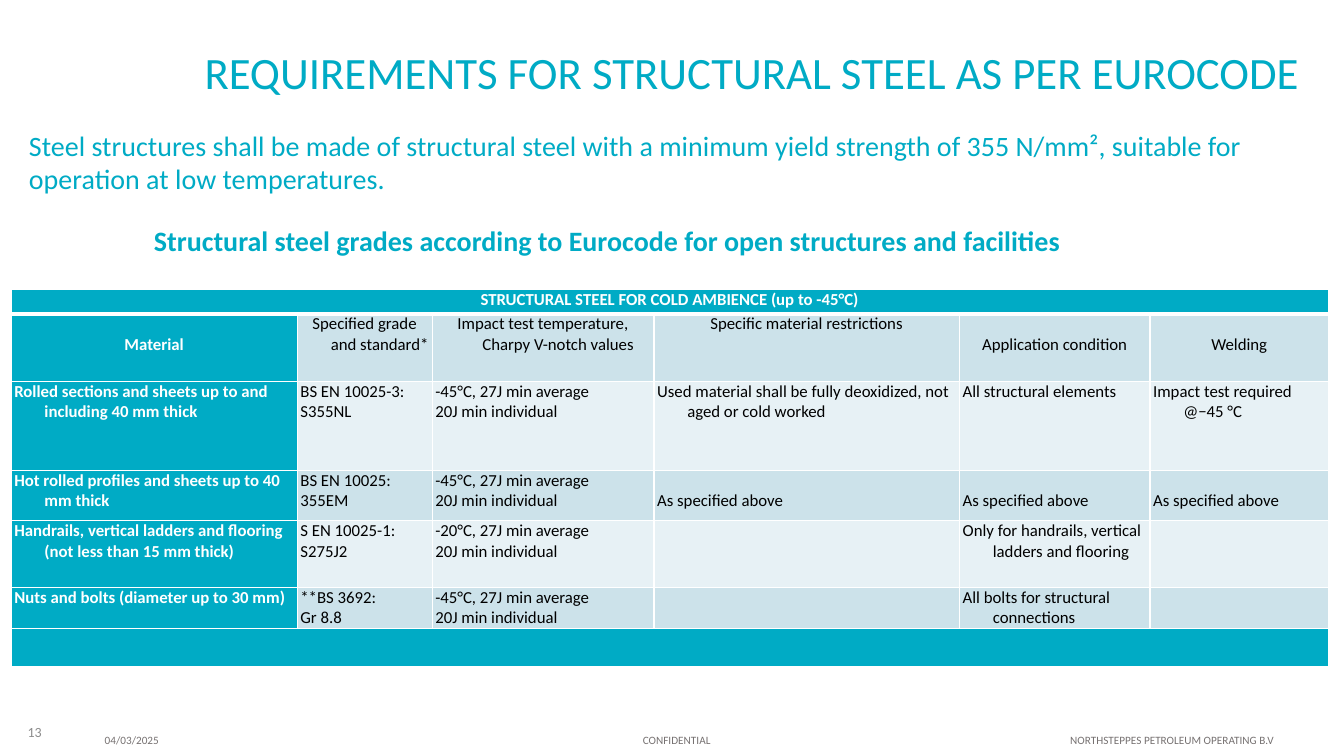
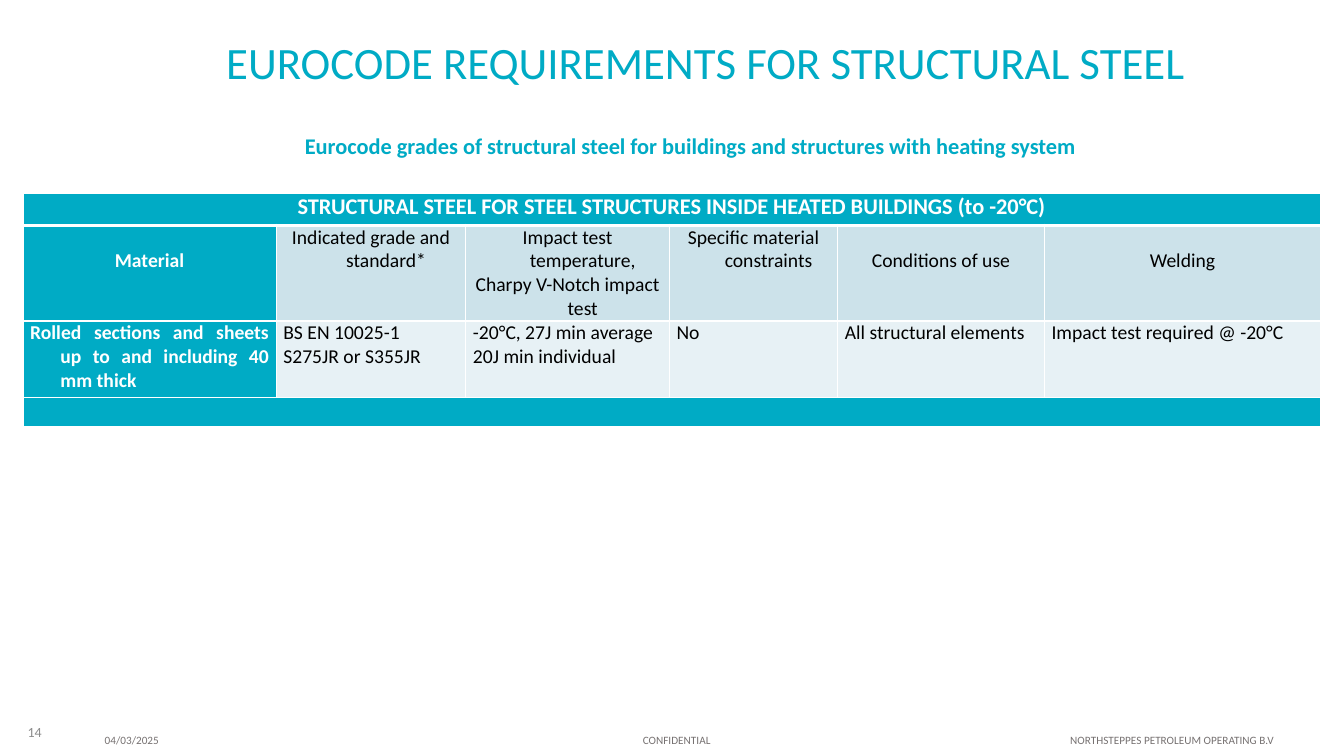
from dataclasses import dataclass

from lxml.etree import SubElement
from pptx import Presentation
from pptx.dml.color import RGBColor
from pptx.enum.text import MSO_ANCHOR as Anchor, PP_ALIGN as Align
from pptx.oxml.ns import qn
from pptx.util import Cm, Pt


# Theme
@dataclass(frozen=True)
class Theme:
    font: str = "Calibri"
    teal: str = "00ABC5"
    pale: str = "CCE2EA"
    paler: str = "E7F1F5"
    white: str = "FFFFFF"
    black: str = "000000"
    grey: str = "8C8C8C"
    footer_grey: str = "767171"
    title: int = 32
    lead: int = 20
    heading: int = 16
    number: int = 10
    footer: int = 8
    hanging: float = 0.76
    line_height: float = 1.22


THEME = Theme()

# Content: lengths in centimetres; "lowered" cells start one line down
FOOTER = ["04/03/2025", "CONFIDENTIAL", "NORTHSTEPPES PETROLEUM OPERATING B.V"]
FOOTER_TABS = [13.56, 24.33]
COLD_IMPACT = "-45°C, 27J min average\n20J min individual"
SAME = "As specified above"

SLIDES = [
    {
        "number": "13",
        "title": "REQUIREMENTS FOR STRUCTURAL STEEL AS PER EUROCODE",
        "title_at": (4.34, 1.14, 29.24, 1.63),
        "texts": [
            {"text": "Steel structures shall be made of structural steel with a minimum "
                     "yield strength of 355 N/mm², suitable for operation at low temperatures.",
             "at": (0.48, 3.1, 33.1, 2), "size": THEME.lead},
            {"text": "Structural steel grades according to Eurocode for open structures "
                     "and facilities",
             "at": (3.63, 5.5, 26, 1.1), "size": THEME.lead, "bold": True},
        ],
        "table": {
            "at": (0.28, 7.3),
            "columns": [7.21, 3.4, 5.59, 7.7, 4.8, 4.5],
            "heights": [0.61, 1.7, 2.24, 1.27, 1.68, 1.03, 0.97],
            "inset": 0.08, "caption_size": 12, "size": 12, "align": Align.LEFT,
            "lowered": {(1, 0), (1, 4), (1, 5), (3, 3), (3, 4), (3, 5)},
            "caption": "STRUCTURAL STEEL FOR COLD AMBIENCE (up to -45°C)",
            "rows": [
                ["Material", "Specified grade and standard*",
                 "Impact test temperature, Charpy V-notch values",
                 "Specific material restrictions", "Application condition", "Welding"],
                ["Rolled sections and sheets up to and including 40 mm thick",
                 "BS EN 10025-3:\nS355NL", COLD_IMPACT,
                 "Used material shall be fully deoxidized, not aged or cold worked",
                 "All structural elements", "Impact test required @−45 °C"],
                ["Hot rolled profiles and sheets up to 40 mm thick",
                 "BS EN 10025:\n355EM", COLD_IMPACT, SAME, SAME, SAME],
                ["Handrails, vertical ladders and flooring (not less than 15 mm thick)",
                 "S EN 10025-1:\nS275J2", "-20°C, 27J min average\n20J min individual",
                 "", "Only for handrails, vertical ladders and flooring", ""],
                ["Nuts and bolts (diameter up to 30 mm)", "**BS 3692:\nGr 8.8",
                 COLD_IMPACT, "", "All bolts for structural connections", ""],
            ],
        },
    },
    {
        "number": "14",
        "title": "EUROCODE REQUIREMENTS FOR STRUCTURAL STEEL",
        "title_at": (2.64, 0.91, 30.3, 1.75),
        "texts": [
            {"text": "Eurocode grades of structural steel for buildings and structures "
                     "with heating system",
             "at": (0, 3.2, 33.87, 1.09), "size": THEME.heading, "bold": True,
             "align": Align.CENTER, "anchor": Anchor.MIDDLE,
             "insets": (1.19, 0.13, 0.25, 0.28)},
        ],
        "table": {
            "at": (0.58, 4.87),
            "columns": [6.38, 4.78, 5.13, 4.24, 5.21, 6.96],
            "heights": [0.81, 2.41, 1.93, 0.74],
            "inset": 0.18, "caption_size": 16, "size": 14, "align": Align.JUSTIFY,
            "lowered": {(1, 0), (1, 4), (1, 5)},
            "caption": "STRUCTURAL STEEL FOR STEEL STRUCTURES INSIDE HEATED BUILDINGS "
                       "(to -20°C)",
            "rows": [
                ["Material", "Indicated grade and standard*",
                 "Impact test temperature,\nCharpy V-Notch impact test",
                 "Specific material constraints", "Conditions of use", "Welding"],
                ["Rolled sections and sheets up to and including 40 mm thick",
                 "BS EN 10025-1\nS275JR or S355JR",
                 "-20°C, 27J min average\n20J min individual", "No",
                 "All structural elements", "Impact test required @ -20°C"],
            ],
        },
    },
]


# Text helpers
def style(font, size, color, bold=False):
    font.name = THEME.font
    font.size = Pt(size)
    font.bold = bold
    font.color.rgb = RGBColor.from_string(color)


def add_span(para, text, size, color, bold=False):
    span = para.add_run()
    span.text = text
    style(span.font, size, color, bold)


def add_text(page, text, at, size, color=THEME.teal, bold=False, align=Align.LEFT,
             anchor=Anchor.TOP, insets=(0.25, 0.13, 0.25, 0.13)):
    box = page.shapes.add_textbox(*map(Cm, at))
    frame = box.text_frame
    frame.word_wrap = True
    frame.vertical_anchor = anchor
    (frame.margin_left, frame.margin_top,
     frame.margin_right, frame.margin_bottom) = map(Cm, insets)
    para = frame.paragraphs[0]
    para.alignment = align
    add_span(para, text, size, color, bold)
    return para


# Shared slide parts
def add_title(page, text, at):
    para = add_text(page, text, at, THEME.title, align=Align.CENTER)
    para.line_spacing = 0.9


def add_footer(page, number):
    add_text(page, number, (0, 17.93, 1.3, 1.02), THEME.number, THEME.grey,
             align=Align.RIGHT, anchor=Anchor.MIDDLE)
    para = add_text(page, "\t".join(FOOTER), (2.39, 18.36, 31.47, 0.69),
                    THEME.footer, THEME.footer_grey)
    tabs = SubElement(para._p.get_or_add_pPr(), qn("a:tabLst"))
    for position in FOOTER_TABS:
        SubElement(tabs, qn("a:tab"), pos=str(Cm(position)), algn="l")


# Table
def add_borders(cell, row):
    properties = cell._tc.get_or_add_tcPr()
    for side in "LRTB":
        under_caption = (row, side) in {(0, "B"), (1, "T")}
        line = SubElement(properties, qn(f"a:ln{side}"),
                          w=str(Pt(3 if under_caption else 1)))
        fill = SubElement(line, qn("a:solidFill"))
        SubElement(fill, qn("a:srgbClr"), val=THEME.white)


def fill_cell(cell, text, size, color, bold, align):
    for index, line in enumerate(text.split("\n")):
        frame = cell.text_frame
        para = frame.add_paragraph() if index else frame.paragraphs[0]
        para.alignment = align
        indent = para._p.get_or_add_pPr()
        indent.set("marL", str(Cm(THEME.hanging)))
        indent.set("indent", str(-Cm(THEME.hanging)))
        if line:
            add_span(para, line, size, color, bold)
        else:
            para.font.size = Pt(size)


def add_steel_table(page, spec_table):
    columns, heights = spec_table["columns"], spec_table["heights"]
    blank = [""] * (len(columns) - 1)
    rows = [[spec_table["caption"], *blank], *spec_table["rows"], ["", *blank]]
    last = len(rows) - 1
    table = page.shapes.add_table(
        len(rows), len(columns), *map(Cm, spec_table["at"]),
        Cm(sum(columns)), Cm(sum(heights))).table
    table.first_row = table.horz_banding = False
    for column, width in zip(table.columns, columns):
        column.width = Cm(width)
    for row, height in zip(table.rows, heights):
        row.height = Cm(height)
    for r, texts in enumerate(rows):
        for c, text in enumerate(texts):
            cell = table.cell(r, c)
            size = spec_table["caption_size" if r == 0 else "size"]
            cell.margin_left = cell.margin_right = Cm(spec_table["inset"])
            lowered = (r, c) in spec_table["lowered"]
            cell.margin_top = Pt(size * THEME.line_height) if lowered else 0
            cell.margin_bottom = 0
            add_borders(cell, r)
            strong = c == 0 or r in (0, last)
            shade = THEME.teal if strong else THEME.pale if r % 2 else THEME.paler
            cell.fill.solid()
            cell.fill.fore_color.rgb = RGBColor.from_string(shade)
            fill_cell(cell, text, size, THEME.white if strong else THEME.black,
                      strong, Align.CENTER if r < 2 else spec_table["align"])
    for r in (0, last):
        table.cell(r, 0).merge(table.cell(r, len(columns) - 1))


def main():
    deck = Presentation()
    deck.slide_width, deck.slide_height = Cm(33.87), Cm(19.05)
    for content in SLIDES:
        page = deck.slides.add_slide(deck.slide_layouts[6])
        add_title(page, content["title"], content["title_at"])
        for text in content["texts"]:
            add_text(page, **text)
        add_steel_table(page, content["table"])
        add_footer(page, content["number"])
    deck.save("out.pptx")


if __name__ == "__main__":
    main()
